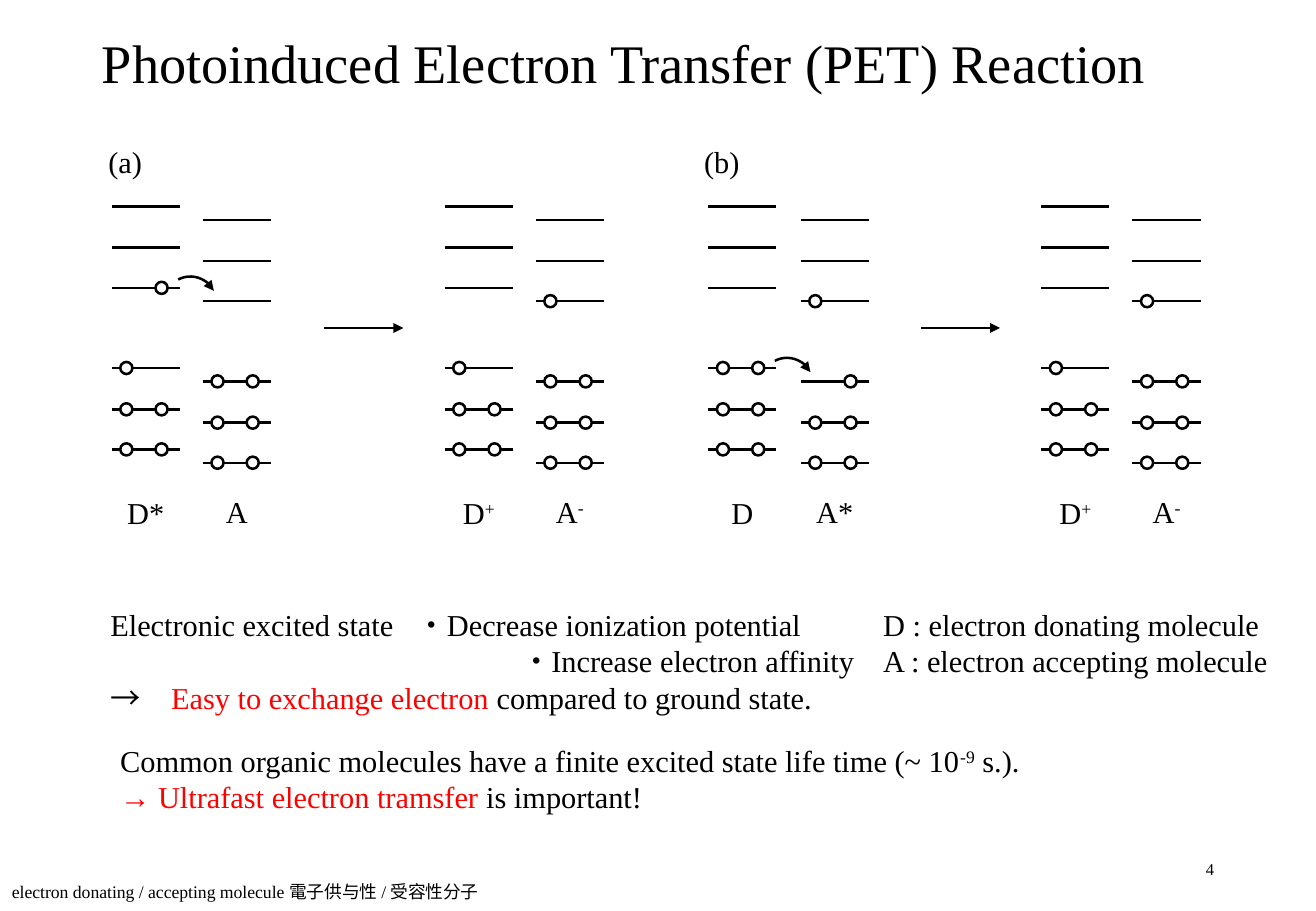
from pptx import Presentation
from pptx.dml.color import RGBColor
from pptx.enum.shapes import MSO_CONNECTOR, MSO_SHAPE
from pptx.enum.text import MSO_ANCHOR, PP_ALIGN
from pptx.oxml.ns import qn
from pptx.util import Inches, Pt
from lxml.etree import SubElement

BLACK = RGBColor(0, 0, 0)
WHITE = RGBColor(255, 255, 255)
RED = RGBColor(255, 0, 0)
FONT = "Times New Roman"

deck = Presentation()
deck.slide_width = Inches(10.83)
deck.slide_height = Inches(7.5)
slide = deck.slides.add_slide(deck.slide_layouts[6])
shapes = slide.shapes


def write(x, y, w, h, lines, size=18, align=PP_ALIGN.LEFT):
    """Each line is a list of runs; each run is (text, colour, raised)."""
    frame = shapes.add_textbox(Inches(x), Inches(y), Inches(w), Inches(h)).text_frame
    frame.word_wrap = True
    for i, line in enumerate(lines):
        para = frame.add_paragraph() if i else frame.paragraphs[0]
        para.alignment = align
        for text, color, raised in line:
            run = para.add_run()
            run.text = text
            run.font.name = FONT
            run.font.size = Pt(size)
            run.font.color.rgb = color
            if raised:
                run._r.get_or_add_rPr().set("baseline", "30000")
    return frame


def draw_line(x, y, w):
    line = shapes.add_connector(MSO_CONNECTOR.STRAIGHT, Inches(x), Inches(y),
                                Inches(x + w), Inches(y))
    line.line.color.rgb = BLACK
    line.line.width = Pt(1.5)
    SubElement(line._element.spPr, qn("a:effectLst"))
    return line


# Title
title = write(0.74, 0.21, 9.34, 0.67,
              [[("Photoinduced Electron Transfer (PET) Reaction", BLACK, False)]], 32.2)
title.vertical_anchor = MSO_ANCHOR.MIDDLE
title.paragraphs[0].line_spacing = 0.9

# Energy levels: left edge, drop, label, charge, electrons from top to bottom
LEVELS = [1.7, 2.04, 2.37, 3.03, 3.37, 3.7]
SEATS = {"L": 0.07, "R": 0.36}
STATES = [
    (0.92, 0, "D*", "", ["", "", "R", "L", "LR", "LR"]),
    (1.67, 0.11, "A", "", ["", "", "", "LR", "LR", "LR"]),
    (3.66, 0, "D", "+", ["", "", "", "L", "LR", "LR"]),
    (4.41, 0.11, "A", "-", ["", "", "L", "LR", "LR", "LR"]),
    (5.83, 0, "D", "", ["", "", "", "LR", "LR", "LR"]),
    (6.59, 0.11, "A*", "", ["", "", "L", "R", "LR", "LR"]),
    (8.57, 0, "D", "+", ["", "", "", "L", "LR", "LR"]),
    (9.32, 0.11, "A", "-", ["", "", "L", "LR", "LR", "LR"]),
]
for x, drop, label, charge, filled in STATES:
    for level, seats in zip(LEVELS, filled):
        y = level + drop
        draw_line(x, y, 0.56)
        for seat in seats:
            dot = shapes.add_shape(MSO_SHAPE.OVAL, Inches(x + SEATS[seat]),
                                   Inches(y - 0.05), Inches(0.1), Inches(0.1))
            dot.shadow.inherit = False
            dot.fill.solid()
            dot.fill.fore_color.rgb = WHITE
            dot.line.color.rgb = BLACK
            dot.line.width = Pt(1.5)
    runs = [(label, BLACK, False)]
    if charge:
        runs.append((charge, BLACK, True))
    write(x - 0.02, 4.02 if drop == 0 else 4.01, 0.6, 0.4, [runs], align=PP_ALIGN.CENTER)

# Schemes (a) and (b): caption, reaction arrow, electron jump
SCHEMES = [
    ("(a)", 0.73, 2.67, 1.35, 2.28),
    ("(b)", 5.64, 7.58, 6.26, 2.95),
]
for name, left, start, arc_x, arc_y in SCHEMES:
    write(left, 1.13, 0.6, 0.4, [[(name, BLACK, False)]], align=PP_ALIGN.CENTER)
    arrow = draw_line(start, 2.7, 0.65)
    SubElement(arrow.line._get_or_add_ln(), qn("a:tailEnd"), type="triangle")
    jump = shapes.add_shape(MSO_SHAPE.ARC, Inches(arc_x), Inches(arc_y),
                            Inches(0.44), Inches(0.43))
    jump.shadow.inherit = False
    jump.fill.background()
    jump.line.color.rgb = BLACK
    jump.line.width = Pt(1.5)
    jump.rotation = 241.9
    jump._element.spPr.find(qn("a:xfrm")).set("flipV", "1")
    SubElement(jump.line._get_or_add_ln(), qn("a:headEnd"), type="triangle")

# Notes on the excited state, with a tab stop and an indent for the two points
notes = write(0.81, 4.94, 7.04, 1.01, [
    [("Electronic excited state\t・Decrease ionization potential", BLACK, False)],
    [("・Increase electron affinity", BLACK, False)],
    [("→　", BLACK, False), ("Easy to exchange electron", RED, False),
     (" compared to ground state.", BLACK, False)],
])
tabs = SubElement(notes.paragraphs[0]._p.get_or_add_pPr(), qn("a:tabLst"))
SubElement(tabs, qn("a:tab"), pos=str(Inches(2.52)), algn="l")
notes.paragraphs[1]._p.get_or_add_pPr().set("marL", str(Inches(3.38)))

# Page number
page = write(7.65, 6.95, 2.44, 0.4, [[("4", BLACK, False)]], 9.8, PP_ALIGN.RIGHT)
page.vertical_anchor = MSO_ANCHOR.MIDDLE

# Life time, glossary and key
write(0.89, 6.06, 8.04, 0.71, [
    [("Common organic molecules have a finite excited state life time (~ 10", BLACK, False),
     ("-9", BLACK, True), (" s.).", BLACK, False)],
    [("→ Ultrafast electron tramsfer ", RED, False), ("is important!", BLACK, False)],
])
write(0, 7.2, 4.24, 0.28,
      [[("electron donating / accepting molecule 電子供与性 / 受容性分子", BLACK, False)]], 10.5)
write(7.17, 4.94, 3.53, 0.71, [
    [("D : electron donating molecule", BLACK, False)],
    [("A : electron accepting molecule", BLACK, False)],
])

deck.save("out.pptx")
